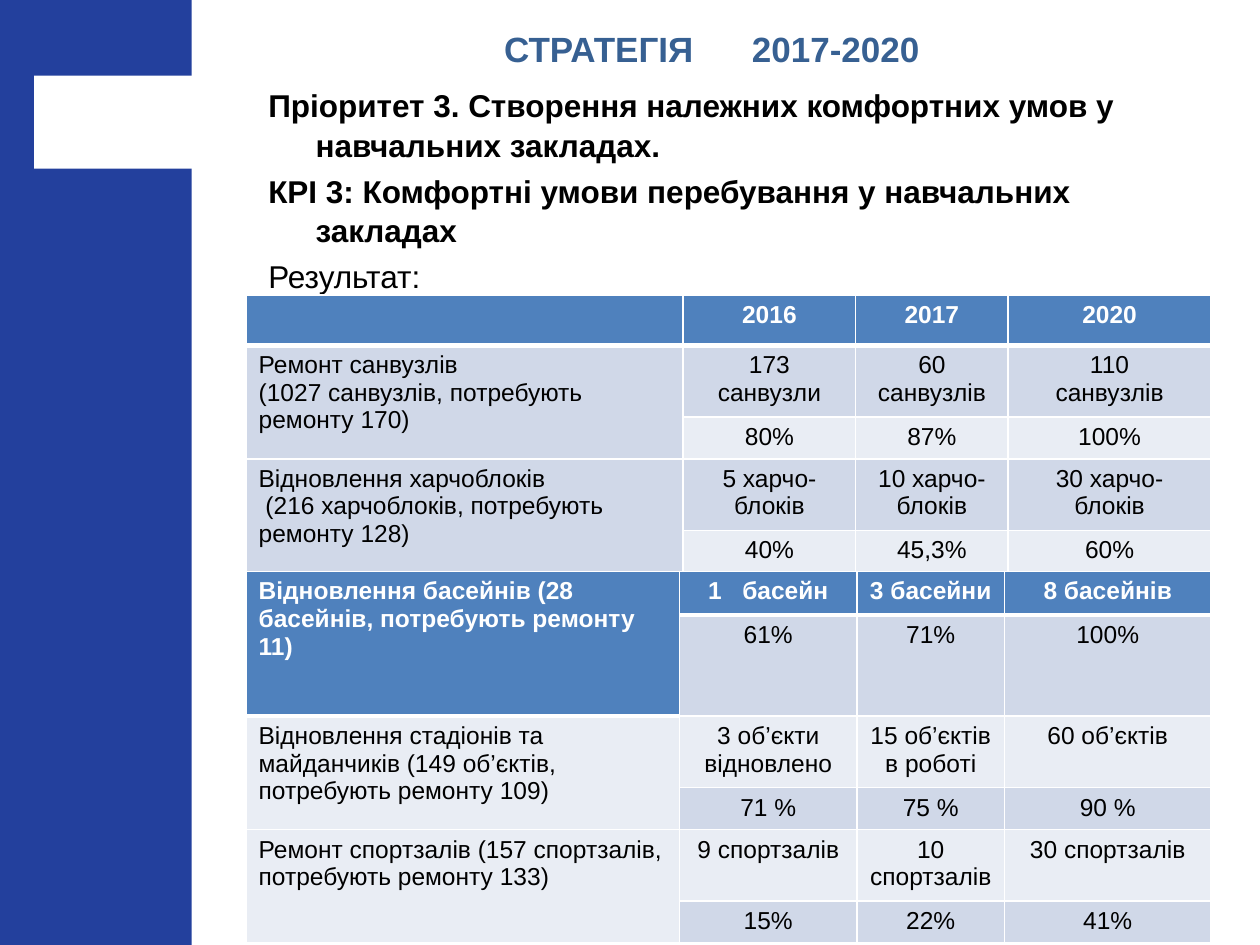
from lxml.etree import SubElement
from pptx import Presentation
from pptx.dml.color import RGBColor
from pptx.enum.shapes import MSO_SHAPE
from pptx.enum.text import MSO_ANCHOR, PP_ALIGN
from pptx.oxml.ns import qn
from pptx.util import Pt

NAVY = RGBColor(0x23, 0x40, 0x9D)
STEEL = RGBColor(0x37, 0x60, 0x92)
HEADER = RGBColor(0x4F, 0x81, 0xBD)
BAND_DARK = RGBColor(0xD0, 0xD8, 0xE8)
BAND_LIGHT = RGBColor(0xE9, 0xED, 0xF4)
WHITE = RGBColor(0xFF, 0xFF, 0xFF)
BLACK = RGBColor(0, 0, 0)


def add_span(para, text, size, color, bold, tracking=0):
    span = para.add_run()
    span.text = text
    span.font.name = "Arial"
    span.font.size = Pt(size)
    span.font.bold = bold
    span.font.color.rgb = color
    if tracking:
        span._r.get_or_add_rPr().set("spc", str(tracking))


def add_border(cell, side, width):
    line = SubElement(cell._tc.get_or_add_tcPr(), qn(f"a:ln{side}"), w=str(Pt(width)))
    fill = SubElement(line, qn("a:solidFill"))
    SubElement(fill, qn("a:srgbClr"), val=str(WHITE))


deck = Presentation()
deck.slide_width, deck.slide_height = Pt(720), Pt(540)
page = deck.slides.add_slide(deck.slide_layouts[6])

for left, top, width, height, color in [
    (0, 0, 109.5, 540, NAVY),
    (19.5, 43.2, 95.7, 53.2, WHITE),
]:
    panel = page.shapes.add_shape(
        MSO_SHAPE.RECTANGLE, Pt(left), Pt(top), Pt(width), Pt(height))
    panel.shadow.inherit = False
    panel.fill.solid()
    panel.fill.fore_color.rgb = color
    panel.line.fill.background()

title = page.shapes.add_textbox(Pt(147.6), Pt(10.8), Pt(518.4), Pt(33.8)).text_frame
title.word_wrap = True
title.vertical_anchor = MSO_ANCHOR.MIDDLE
para = title.paragraphs[0]
para.alignment = PP_ALIGN.CENTER
for text, tracking in [("СТРАТЕГІЯ", 0), (" ", 2780), ("2017-2020", 0)]:
    add_span(para, text, 20, STEEL, True, tracking)

body = page.shapes.add_textbox(Pt(146.2), Pt(44.6), Pt(536.4), Pt(129.6)).text_frame
body.word_wrap = True
for index, (text, bold) in enumerate([
    ("Пріоритет 3. Створення належних комфортних умов у навчальних закладах.", True),
    ("КРІ 3: Комфортні умови перебування у навчальних закладах", True),
    ("Результат:", False),
]):
    para = body.add_paragraph() if index else body.paragraphs[0]
    properties = para._p.get_or_add_pPr()
    properties.set("marL", str(Pt(27)))
    properties.set("indent", str(Pt(-27)))
    para.line_spacing = 1.05
    if index:
        para.space_before = Pt(3.6)
    add_span(para, text, 18, BLACK, bold)

repairs = [
    ["", "2016", "2017", "2020"],
    ["Ремонт санвузлів\n(1027 санвузлів, потребують ремонту 170)",
     "173 санвузли", "60\nсанвузлів", "110\nсанвузлів"],
    ["", "80%", "87%", "100%"],
    ["Відновлення харчоблоків\n(216 харчоблоків, потребують ремонту 128)",
     "5 харчо-блоків", "10 харчо-блоків", "30 харчо-блоків"],
    ["", "40%", "45,3%", "60%"],
]
sports = [
    ["Відновлення басейнів (28 басейнів, потребують ремонту 11)",
     "1 басейн", "3 басейни", "8 басейнів"],
    ["", "61%", "71%", "100%"],
    ["Відновлення стадіонів та майданчиків (149 об’єктів, потребують ремонту 109)",
     "3 об’єкти відновлено", "15 об’єктів в роботі", "60 об’єктів"],
    ["", "71 %", "75 %", "90 %"],
    ["Ремонт спортзалів (157 спортзалів, потребують ремонту 133)",
     "9 спортзалів", "10 спортзалів", "30 спортзалів"],
    ["", "15%", "22%", "41%"],
]

for top, rows, widths, heights, first_pair in [
    (168.5, repairs, [249.8, 98.6, 87.1, 116], [28, 38.5, 23, 38.5, 23], 1),
    (326.5, sports, [247.7, 101.5, 84.2, 118.1], [25, 55, 38.5, 23, 38.5, 23], 0),
]:
    table = page.shapes.add_table(
        len(rows), 4, Pt(140.6), Pt(top), Pt(sum(widths)), Pt(sum(heights))).table
    for column, width in zip(table.columns, widths):
        column.width = Pt(width)
    for row, height in zip(table.rows, heights):
        row.height = Pt(height)
    for start in range(first_pair, len(rows), 2):
        table.cell(start, 0).merge(table.cell(start + 1, 0))
    for r, texts in enumerate(rows):
        for c, text in enumerate(texts):
            cell = table.cell(r, c)
            band = r - 1 if cell.is_spanned else r
            header = band == 0
            below_header = r == 1 or (c == 0 and first_pair == 0 and r == 2)
            for side, width in [("L", 1), ("R", 1), ("T", 3 if below_header else 1),
                                ("B", 3 if header else 1)]:
                add_border(cell, side, width)
            cell.fill.solid()
            cell.fill.fore_color.rgb = (
                HEADER if header else BAND_DARK if band % 2 else BAND_LIGHT)
            if not text:
                continue
            for index, line in enumerate(text.split("\n")):
                frame = cell.text_frame
                para = frame.add_paragraph() if index else frame.paragraphs[0]
                para.alignment = PP_ALIGN.CENTER if c else PP_ALIGN.LEFT
                if line.startswith("(216"):
                    para._p.get_or_add_pPr().set("indent", str(Pt(3.9)))
                color = WHITE if header else BLACK
                if line == "1 басейн":
                    add_span(para, "1", 14, color, header)
                    add_span(para, " ", 14, color, header, 780)
                    line = "басейн"
                add_span(para, line, 14, color, header)

deck.save("out.pptx")
